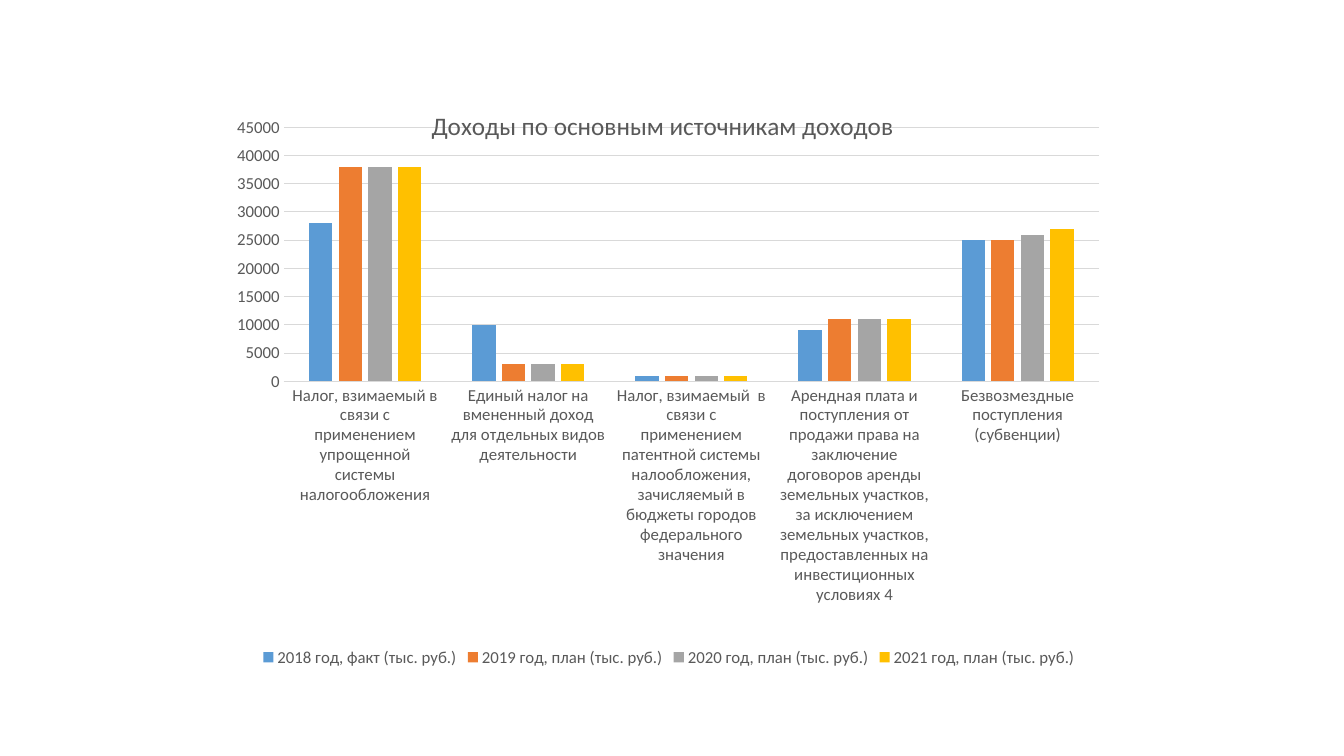
import lxml.etree
import pptx
import pptx.chart.data
import pptx.dml.color
import pptx.enum.chart
import pptx.oxml
import pptx.oxml.ns
import pptx.util

FONT = "Calibri"
TEXT_COLOR = "595959"
LINE_COLOR = "D9D9D9"
TITLE = "Доходы по основным источникам доходов"
CATEGORIES = [
    "Налог, взимаемый в связи с применением упрощенной системы налогообложения",
    "Единый налог на вмененный доход для отдельных видов деятельности",
    "Налог, взимаемый  в связи с применением патентной системы налообложения, "
    "зачисляемый в бюджеты городов федерального значения",
    "Арендная плата и поступления от продажи права на заключение договоров аренды "
    "земельных участков, за исключением земельных участков, предоставленных на "
    "инвестиционных условиях 4",
    "Безвозмездные поступления (субвенции)",
]
SERIES = [
    ("2018 год, факт (тыс. руб.)", "5B9BD5", [28000, 10000, 1000, 9000, 25000]),
    ("2019 год, план (тыс. руб.)", "ED7D31", [38000, 3000, 1000, 11000, 25000]),
    ("2020 год, план (тыс. руб.)", "A5A5A5", [38000, 3000, 1000, 11000, 26000]),
    ("2021 год, план (тыс. руб.)", "FFC000", [38000, 3000, 1000, 11000, 27000]),
]


def color(value):
    """Turn a hex string into a colour."""
    return pptx.dml.color.RGBColor.from_string(value)


def style_font(font, size):
    """Apply the chart typeface, size and text colour."""
    font.name = FONT
    font.size = pptx.util.Pt(size)
    font.bold = False
    font.color.rgb = color(TEXT_COLOR)


def style_line(line):
    """Draw a thin light grey line."""
    line.color.rgb = color(LINE_COLOR)
    line.width = pptx.util.Pt(0.75)


def place(element, position, **settings):
    """Give a chart part a manual layout in fractions of the chart."""
    namespace = pptx.oxml.ns.nsuri("c")
    for previous in element.findall(f"{{{namespace}}}layout"):
        element.remove(previous)
    layout = lxml.etree.Element(f"{{{namespace}}}layout")
    manual = lxml.etree.SubElement(layout, f"{{{namespace}}}manualLayout")
    entries = {**settings, "xMode": "edge", "yMode": "edge", **position}
    for name, value in entries.items():
        lxml.etree.SubElement(manual, f"{{{namespace}}}{name}").set("val", str(value))
    text = element.find(f"{{{namespace}}}tx")
    element.insert(0 if text is None else 1, layout)


def style_title(chart):
    """Write the chart title over the top of the plot."""
    chart.has_title = True
    title = chart.chart_title
    title.include_in_layout = False
    run = title.text_frame.paragraphs[0].add_run()
    run.text = TITLE
    style_font(run.font, 18)
    place(title._element, {"x": 0.23, "y": 0.05})


def style_axes(chart):
    """Set the labels, lines and gridlines of both axes."""
    for axis in (chart.category_axis, chart.value_axis):
        axis.major_tick_mark = pptx.enum.chart.XL_TICK_MARK.NONE
        axis.minor_tick_mark = pptx.enum.chart.XL_TICK_MARK.NONE
        style_font(axis.tick_labels.font, 12)
    style_line(chart.category_axis.format.line)
    values = chart.value_axis
    values.minimum_scale, values.maximum_scale, values.major_unit = 0, 45000, 5000
    values.format.line.fill.background()
    values.has_major_gridlines = True
    style_line(values.major_gridlines.format.line)


def add_income_chart(slide, left, top, width, height):
    """Place the clustered income chart in the given box."""
    data = pptx.chart.data.CategoryChartData()
    data.categories = CATEGORIES
    for name, _, values in SERIES:
        data.add_series(name, values)
    frame = slide.shapes.add_chart(
        pptx.enum.chart.XL_CHART_TYPE.COLUMN_CLUSTERED, left, top, width, height, data
    )
    chart = frame.chart
    chart.font.name = FONT
    chart.font.size = pptx.util.Pt(10)
    plot = chart.plots[0]
    plot.gap_width = 219
    plot.overlap = -27
    plot.vary_by_categories = False
    for series, (_, fill, _) in zip(plot.series, SERIES):
        series.format.fill.solid()
        series.format.fill.fore_color.rgb = color(fill)
        series.invert_if_negative = False
    style_title(chart)
    style_axes(chart)
    chart.has_legend = True
    chart.legend.position = pptx.enum.chart.XL_LEGEND_POSITION.BOTTOM
    chart.legend.include_in_layout = False
    style_font(chart.legend.font, 12)
    plot_area = chart._chartSpace.chart.plotArea
    place(plot_area, {"x": 0.07, "y": 0.09, "w": 0.91, "h": 0.425}, layoutTarget="inner")


def main():
    """Build and save the presentation."""
    presentation = pptx.Presentation()
    presentation.slide_width = pptx.util.Inches(13.33)
    presentation.slide_height = pptx.util.Inches(7.5)
    slide = presentation.slides.add_slide(presentation.slide_layouts[6])
    box = [pptx.util.Inches(length) for length in (2.19, 0.73, 8.89, 5.93)]
    add_income_chart(slide, *box)
    presentation.save("out.pptx")


if __name__ == "__main__":
    main()
